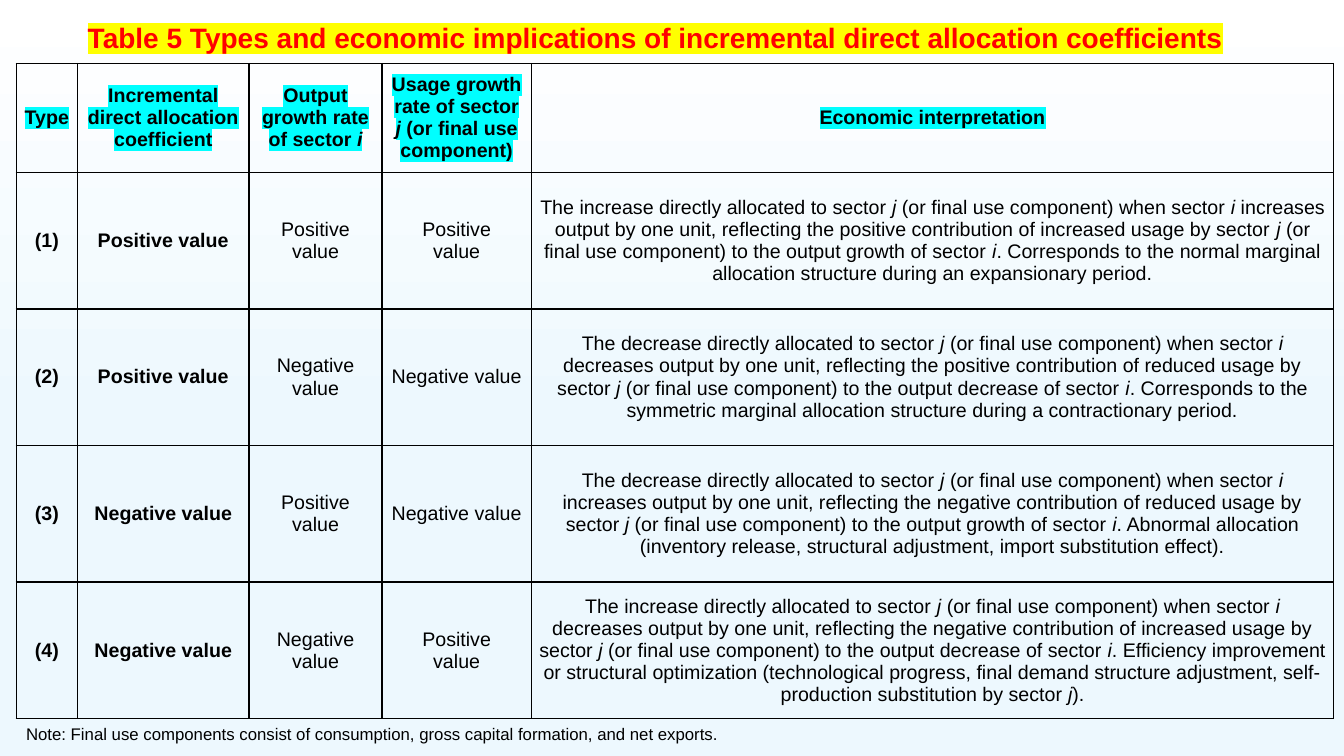
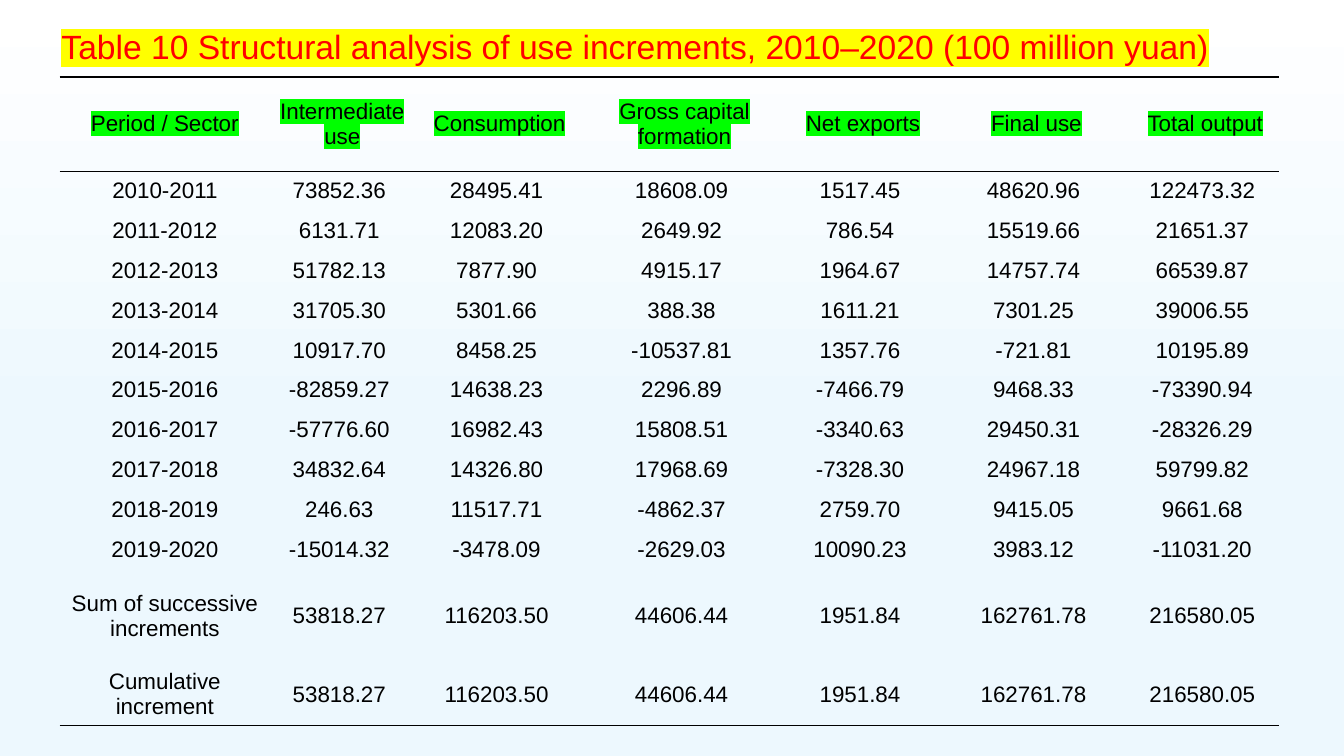
from lxml import etree
from pptx import Presentation
from pptx.dml.color import RGBColor
from pptx.enum.text import MSO_ANCHOR, MSO_AUTO_SIZE, PP_ALIGN
from pptx.oxml.ns import qn
from pptx.util import Inches, Pt

TOP, MIDDLE = MSO_ANCHOR.TOP, MSO_ANCHOR.MIDDLE
LEFT, CENTER = PP_ALIGN.LEFT, PP_ALIGN.CENTER
NO_AUTOFIT = MSO_AUTO_SIZE.NONE

BLACK = RGBColor(0x00, 0x00, 0x00)
WHITE = RGBColor(0xFF, 0xFF, 0xFF)
PALE_BLUE = RGBColor(0xED, 0xF8, 0xFE)
RED = RGBColor(0xFF, 0x00, 0x00)
YELLOW = RGBColor(0xFF, 0xFF, 0x00)
CYAN = RGBColor(0x00, 0xFF, 0xFF)
GREEN = RGBColor(0x00, 0xFF, 0x00)

FONT = "Arial"
TITLE_ONLY = 5
CELL_MARGIN = 0.07
NUMBER_MARGIN = 0.13
GRID_LINE, RULE = 1, 1.5

COEFFICIENT_TITLE = "Table 5 Types and economic implications of incremental direct allocation coefficients"
COEFFICIENT_ROWS = [
    ("Type", "Incremental direct allocation coefficient", "Output growth rate of sector *i*",
     "Usage growth rate of sector *j* (or final use component)", "Economic interpretation"),
    ("(1)", "Positive value", "Positive value", "Positive\nvalue",
     "The increase directly allocated to sector *j* (or final use component) when sector *i* "
     "increases output by one unit, reflecting the positive contribution of increased usage by "
     "sector *j* (or final use component) to the output growth of sector *i*. Corresponds to the "
     "normal marginal allocation structure during an expansionary period."),
    ("(2)", "Positive value", "Negative value", "Negative value",
     "The decrease directly allocated to sector *j* (or final use component) when sector *i* "
     "decreases output by one unit, reflecting the positive contribution of reduced usage by "
     "sector *j* (or final use component) to the output decrease of sector *i*. Corresponds to the "
     "symmetric marginal allocation structure during a contractionary period."),
    ("(3)", "Negative value", "Positive value", "Negative value",
     "The decrease directly allocated to sector *j* (or final use component) when sector *i* "
     "increases output by one unit, reflecting the negative contribution of reduced usage by "
     "sector *j* (or final use component) to the output growth of sector *i*. Abnormal allocation "
     "(inventory release, structural adjustment, import substitution effect)."),
    ("(4)", "Negative value", "Negative value", "Positive\nvalue",
     "The increase directly allocated to sector *j* (or final use component) when sector *i* "
     "decreases output by one unit, reflecting the negative contribution of increased usage by "
     "sector *j* (or final use component) to the output decrease of sector *i*. Efficiency "
     "improvement or structural optimization (technological progress, final demand structure "
     "adjustment, self-production substitution by sector *j*)."),
]
COEFFICIENT_WIDTHS = [0.61, 1.7, 1.32, 1.48, 7.96]
COEFFICIENT_HEIGHTS = [1.08] + [(6.5 - 1.08) / 4] * 4
NOTE = "Note: Final use components consist of consumption, gross capital formation, and net exports."

INCREMENT_TITLE = "Table 10 Structural analysis of use increments, 2010–2020 (100 million yuan)"
INCREMENT_ROWS = [
    ("Period / Sector", "Intermediate use", "Consumption", "Gross capital formation",
     "Net exports", "Final use", "Total output"),
    ("2010-2011", "73852.36", "28495.41", "18608.09", "1517.45", "48620.96", "122473.32"),
    ("2011-2012", "6131.71", "12083.20", "2649.92", "786.54", "15519.66", "21651.37"),
    ("2012-2013", "51782.13", "7877.90", "4915.17", "1964.67", "14757.74", "66539.87"),
    ("2013-2014", "31705.30", "5301.66", "388.38", "1611.21", "7301.25", "39006.55"),
    ("2014-2015", "10917.70", "8458.25", "-10537.81", "1357.76", "-721.81", "10195.89"),
    ("2015-2016", "-82859.27", "14638.23", "2296.89", "-7466.79", "9468.33", "-73390.94"),
    ("2016-2017", "-57776.60", "16982.43", "15808.51", "-3340.63", "29450.31", "-28326.29"),
    ("2017-2018", "34832.64", "14326.80", "17968.69", "-7328.30", "24967.18", "59799.82"),
    ("2018-2019", "246.63", "11517.71", "-4862.37", "2759.70", "9415.05", "9661.68"),
    ("2019-2020", "-15014.32", "-3478.09", "-2629.03", "10090.23", "3983.12", "-11031.20"),
    ("Sum of successive increments", "53818.27", "116203.50", "44606.44", "1951.84",
     "162761.78", "216580.05"),
    ("Cumulative increment", "53818.27", "116203.50", "44606.44", "1951.84",
     "162761.78", "216580.05"),
]
INCREMENT_WIDTHS = [2.09, 1.43, 1.69, 1.98, 1.56, 1.88, 1.47]
INCREMENT_HEIGHTS = [0.94] + [3.95 / 10] * 10 + [0.93, 0.62]


def set_attributes(target, values):
    for name, value in values.items():
        setattr(target, name, value)


def write_text(frame, text, size, color=BLACK, highlight=None, bold=False, align=LEFT):
    for index, line in enumerate(text.split("\n")):
        paragraph = frame.add_paragraph() if index else frame.paragraphs[0]
        paragraph.alignment = align
        for part, words in enumerate(line.split("*")):
            if not words:
                continue
            run = paragraph.add_run()
            run.text = words
            set_attributes(run.font, {"name": FONT, "size": Pt(size), "bold": bold,
                                      "italic": part % 2 == 1})
            run.font.color.rgb = color
            if highlight is not None:
                mark = etree.Element(qn("a:highlight"))
                etree.SubElement(mark, qn("a:srgbClr"), val=str(highlight))
                run.font.fill._xPr.find(qn("a:solidFill")).addnext(mark)


def set_borders(cell, widths):
    properties = cell._tc.get_or_add_tcPr()
    for index, side in enumerate("LRTB"):
        width = widths.get(side, 0)
        line = etree.Element(qn(f"a:ln{side}"), w=str(Pt(width)))
        if width:
            fill = etree.SubElement(line, qn("a:solidFill"))
            etree.SubElement(fill, qn("a:srgbClr"), val=str(BLACK))
        else:
            etree.SubElement(line, qn("a:noFill"))
        properties.insert(index, line)


def add_titled_slide(presentation, title, left, top, size, bold):
    slide = presentation.slides.add_slide(presentation.slide_layouts[TITLE_ONLY])
    shape = slide.shapes.title
    set_attributes(shape, {"left": Inches(left), "top": Inches(top),
                           "width": Inches(12.39), "height": Inches(0.5)})
    set_attributes(shape.text_frame, {"word_wrap": True, "vertical_anchor": TOP,
                                      "auto_size": NO_AUTOFIT})
    write_text(shape.text_frame, title, size, RED, YELLOW, bold)
    return slide


def add_grid(slide, rows, left, top, widths, heights, size, highlight, is_bold, borders, right_margin):
    table = slide.shapes.add_table(len(rows), len(widths), Inches(left), Inches(top),
                                   Inches(sum(widths)), Inches(sum(heights))).table
    set_attributes(table, {"first_row": False, "horz_banding": False})
    for column, width in zip(table.columns, widths):
        column.width = Inches(width)
    for row, height in zip(table.rows, heights):
        row.height = Inches(height)
    for r, values in enumerate(rows):
        for c, text in enumerate(values):
            cell = table.cell(r, c)
            set_attributes(cell, {"vertical_anchor": MIDDLE, "margin_left": Inches(CELL_MARGIN),
                                  "margin_right": Inches(right_margin(r, c)),
                                  "margin_top": 0, "margin_bottom": 0})
            cell.fill.background()
            set_borders(cell, borders(r))
            write_text(cell.text_frame, text, size, highlight=None if r else highlight,
                       bold=is_bold(r, c), align=CENTER)


def increment_borders(row):
    if row == 0:
        return {"T": RULE, "B": GRID_LINE}
    if row == 1:
        return {"T": GRID_LINE}
    return {"B": RULE} if row == len(INCREMENT_ROWS) - 1 else {}


def main():
    presentation = Presentation()
    set_attributes(presentation, {"slide_width": Inches(13.33), "slide_height": Inches(7.5)})
    fill = presentation.slide_master.background.fill
    fill.gradient()
    fill.gradient_angle = 270
    for stop, color, position in zip(fill.gradient_stops, (WHITE, PALE_BLUE), (0, 0.56)):
        stop.color.rgb = color
        stop.position = position

    slide = add_titled_slide(presentation, COEFFICIENT_TITLE, 0.77, 0.15, 20, True)
    add_grid(slide, COEFFICIENT_ROWS, 0.16, 0.63, COEFFICIENT_WIDTHS, COEFFICIENT_HEIGHTS, 14, CYAN,
             is_bold=lambda row, column: row == 0 or column < 2,
             borders=lambda row: dict.fromkeys("LRTB", GRID_LINE),
             right_margin=lambda row, column: CELL_MARGIN)
    note = slide.shapes.add_textbox(Inches(0.16), Inches(7.13), Inches(13.07), Inches(0.35))
    note.text_frame.word_wrap = True
    write_text(note.text_frame, NOTE, 12)

    slide = add_titled_slide(presentation, INCREMENT_TITLE, 0.51, 0.21, 24, False)
    add_grid(slide, INCREMENT_ROWS, 0.59, 0.76, INCREMENT_WIDTHS, INCREMENT_HEIGHTS, 16, GREEN,
             is_bold=lambda row, column: False,
             borders=increment_borders,
             right_margin=lambda row, column: NUMBER_MARGIN if row and column else CELL_MARGIN)
    presentation.save("out.pptx")


if __name__ == "__main__":
    main()
